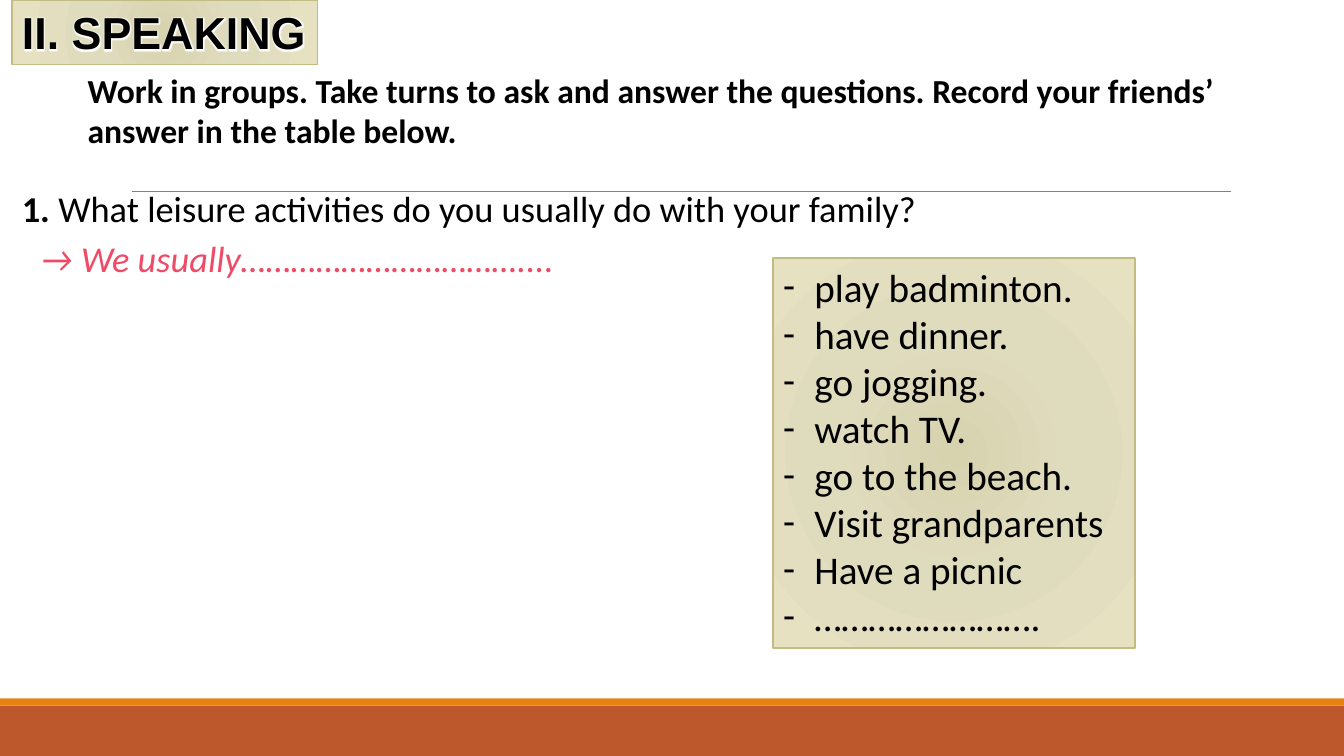
from dataclasses import dataclass, field

from lxml.etree import SubElement
from pptx import Presentation
from pptx.dml.color import RGBColor
from pptx.enum.shapes import MSO_CONNECTOR as Connector, MSO_SHAPE as Preset
from pptx.enum.text import MSO_ANCHOR as Anchor, MSO_AUTO_SIZE as AutoSize, PP_ALIGN as Align
from pptx.oxml import parse_xml
from pptx.oxml.ns import nsdecls, qn
from pptx.util import Cm, Pt

BLACK = RGBColor(0x00, 0x00, 0x00)
PINK = RGBColor(0xEF, 0x4B, 0x66)
RUST = RGBColor(0xBD, 0x58, 0x2C)
ORANGE = RGBColor(0xE4, 0x83, 0x12)
GREY = RGBColor(0x80, 0x80, 0x80)
KHAKI = RGBColor(0xC2, 0xBC, 0x80)
WHITE = RGBColor(0xFF, 0xFF, 0xFF)
PANEL_STOPS = (
    (0, RGBColor(0xD7, 0xD3, 0xAF)),
    (45, RGBColor(0xDF, 0xDB, 0xBD)),
    (100, RGBColor(0xE5, 0xE1, 0xC1)),
)


@dataclass
class Box:
    left: float
    top: float
    width: float
    height: float


@dataclass
class Piece:
    text: str
    style: dict = field(default_factory=dict)


@dataclass
class Caption:
    box: Box
    pieces: list[Piece]
    color: RGBColor = BLACK
    wrap: bool = True


@dataclass
class Band:
    box: Box
    color: RGBColor


BANDS = [
    Band(Box(0, 17.78, 33.87, 1.27), RUST),
    Band(Box(0, 17.6, 33.87, 0.18), ORANGE),
]
CAPTIONS = [
    Caption(Box(1.96, 1.63, 30.05, 2.31), [
        Piece("Work in groups. Take turns to ask and answer the questions. "
              "Record your friends’ answer in the table below.",
              {"size": Pt(24), "bold": True}),
    ]),
    Caption(Box(0.3, 4.57, 28.3, 2.49), [
        Piece("1. ", {"size": Pt(26), "bold": True}),
        Piece("What leisure activities do you usually do with your family?",
              {"size": Pt(26)}),
    ]),
    Caption(Box(0.76, 5.82, 13.69, 1.37), [
        Piece("→ We usually……………………………....", {"size": Pt(26), "italic": True}),
    ], PINK, wrap=False),
]
HEADING = Piece("II. SPEAKING", {"name": "Arial", "size": Pt(32), "bold": True})
ACTIVITIES = [
    "play badminton.", "have dinner.", "go jogging.", "watch TV.",
    "go to the beach.", "Visit grandparents", "Have a picnic", "…………………….",
]


def bounds(box: Box) -> tuple:
    return Cm(box.left), Cm(box.top), Cm(box.width), Cm(box.height)


def write(paragraph, piece: Piece, color: RGBColor = BLACK):
    run = paragraph.add_run()
    run.text = piece.text
    for attribute, value in ({"name": "Calibri"} | piece.style).items():
        setattr(run.font, attribute, value)
    run.font.color.rgb = color
    return run


def dress_panel(panel, box: Box) -> None:
    """Place a placeholder and give it the round khaki gradient."""
    panel.left, panel.top, panel.width, panel.height = bounds(box)
    stops = "".join(
        f'<a:gs pos="{percent * 1000}"><a:srgbClr val="{color}"/></a:gs>'
        for percent, color in PANEL_STOPS
    )
    panel.fill.background()
    no_fill = panel._element.spPr.find(qn("a:noFill"))
    no_fill.getparent().replace(no_fill, parse_xml(
        f'<a:gradFill {nsdecls("a")} rotWithShape="1"><a:gsLst>{stops}</a:gsLst>'
        '<a:path path="circle"><a:fillToRect l="100000" t="100000" r="100000" b="100000"/>'
        '</a:path></a:gradFill>'
    ))
    panel.line.color.rgb = KHAKI
    panel.line.width = Pt(1)
    frame_format = {"word_wrap": True, "auto_size": AutoSize.NONE, "vertical_anchor": Anchor.TOP}
    for attribute, value in frame_format.items():
        setattr(panel.text_frame, attribute, value)


def add_glow(run) -> None:
    glow = parse_xml(
        f'<a:effectLst {nsdecls("a")}><a:glow rad="38100">'
        f'<a:srgbClr val="{WHITE}"/></a:glow></a:effectLst>'
    )
    run.font._element.find(qn("a:solidFill")).addnext(glow)


def add_band(slide, band: Band) -> None:
    stripe = slide.shapes.add_shape(Preset.RECTANGLE, *bounds(band.box))
    stripe.shadow.inherit = False
    stripe.fill.solid()
    stripe.fill.fore_color.rgb = band.color
    stripe.line.fill.background()


def add_rule(slide) -> None:
    rule = slide.shapes.add_connector(
        Connector.STRAIGHT, Cm(3.33), Cm(4.83), Cm(31.01), Cm(4.83))
    rule.line.color.rgb = GREY
    rule.line.width = Pt(0.5)
    SubElement(rule._element.spPr, qn("a:effectLst"))


def add_caption(slide, caption: Caption) -> None:
    frame = slide.shapes.add_textbox(*bounds(caption.box)).text_frame
    frame.word_wrap = caption.wrap
    for piece in caption.pieces:
        write(frame.paragraphs[0], piece, caption.color)


def fill_heading(heading) -> None:
    dress_panel(heading, Box(0.3, 0, 7.7, 1.63))
    paragraph = heading.text_frame.paragraphs[0]
    paragraph.alignment = Align.LEFT
    add_glow(write(paragraph, HEADING))


def fill_activities(activities) -> None:
    dress_panel(activities, Box(19.48, 6.5, 9.12, 9.83))
    frame = activities.text_frame
    for index, activity in enumerate(ACTIVITIES):
        paragraph = frame.add_paragraph() if index else frame.paragraphs[0]
        paragraph.space_before = Pt(0)
        properties = paragraph._p.get_or_add_pPr()
        properties.set("marL", str(Cm(0.79)))
        properties.set("indent", str(-Cm(0.79)))
        SubElement(properties, qn("a:buFont"), typeface="Calibri")
        SubElement(properties, qn("a:buChar"), char="-")
        write(paragraph, Piece(activity, {"size": Pt(28)}))


def main() -> None:
    deck = Presentation()
    deck.slide_width, deck.slide_height = Cm(33.87), Cm(19.05)
    slide = deck.slides.add_slide(deck.slide_layouts[1])

    # Footer bands and the rule under the instruction
    for band in BANDS:
        add_band(slide, band)
    add_rule(slide)

    # Instruction, question and answer starter
    for caption in CAPTIONS:
        add_caption(slide, caption)

    # Heading and list of activities
    fill_heading(slide.shapes.title)
    fill_activities(slide.placeholders[1])

    deck.save("out.pptx")


if __name__ == "__main__":
    main()
